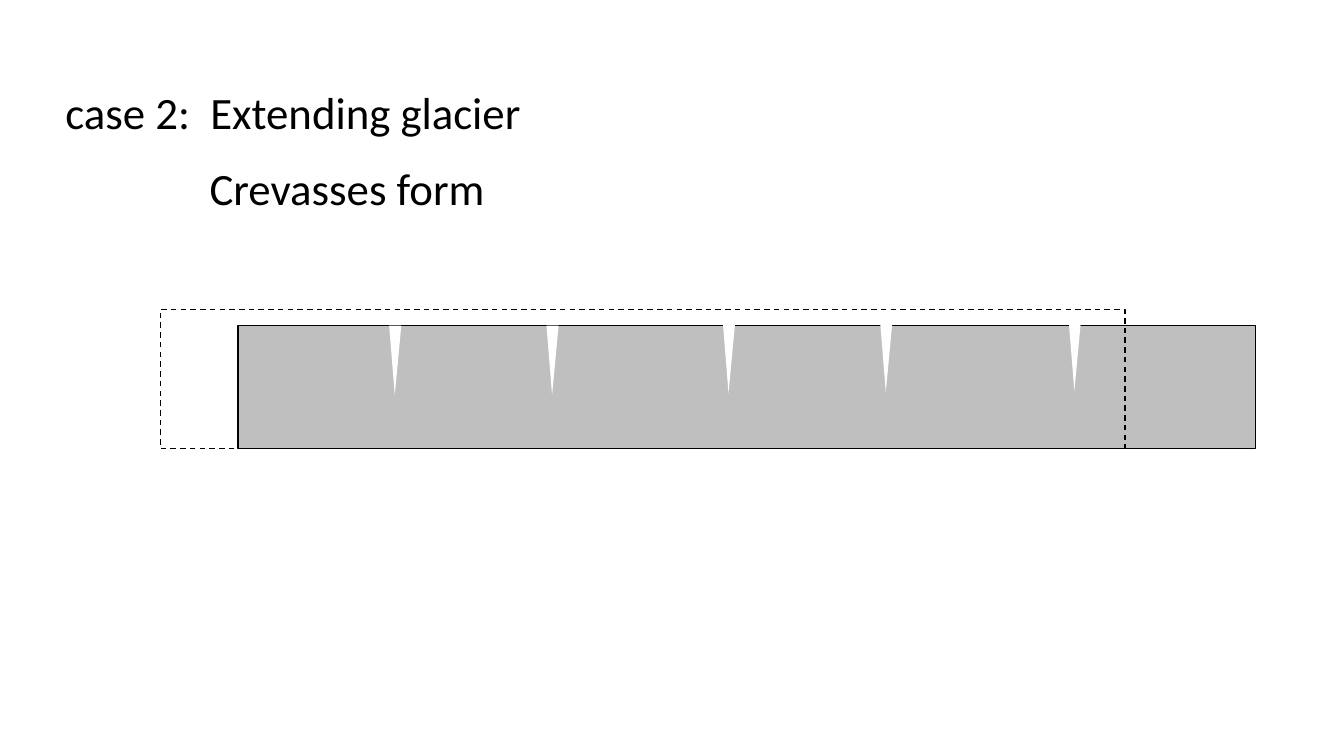
import pptx
import pptx.util
import pptx.dml.color
import pptx.enum.dml
import pptx.enum.shapes
import pptx.enum.text

Inches = pptx.util.Inches
SHAPES = pptx.enum.shapes.MSO_SHAPE

TEXT_FORMAT = {"name": "Calibri", "size": pptx.util.Pt(32)}
OUTLINE = {"width": pptx.util.Pt(1)}
DASHED_OUTLINE = {**OUTLINE, "dash_style": pptx.enum.dml.MSO_LINE.DASH}

# Left and top of each crevasse
CREVASSES = [(3.86, 3.23), (5.42, 3.23), (7.17, 3.21), (8.73, 3.2), (10.6, 3.19)]


def color(hex_string):
    return pptx.dml.color.RGBColor.from_string(hex_string)


def apply_format(target, values):
    for name, value in values.items():
        setattr(target, name, value)


def add_label(page, left, top, width, text):
    box = page.shapes.add_textbox(
        Inches(left), Inches(top), Inches(width), Inches(0.64))
    frame = box.text_frame
    frame.word_wrap = False
    frame.auto_size = pptx.enum.text.MSO_AUTO_SIZE.SHAPE_TO_FIT_TEXT
    span = frame.paragraphs[0].add_run()
    span.text = text
    apply_format(span.font, TEXT_FORMAT)
    span.font.color.rgb = color("000000")


def add_block(page, kind, left, top, width, height, fill=None, outline=None):
    block = page.shapes.add_shape(
        kind, Inches(left), Inches(top), Inches(width), Inches(height))
    block.shadow.inherit = False
    if fill:
        block.fill.solid()
        block.fill.fore_color.rgb = color(fill)
    else:
        block.fill.background()
    if outline:
        block.line.color.rgb = color("000000")
        apply_format(block.line, outline)
    else:
        block.line.fill.background()
    return block


def add_crevasse(page, left, top):
    crevasse = add_block(page, SHAPES.ISOSCELES_TRIANGLE,
                         left, top, 0.12, 0.69, fill="FFFFFF")
    crevasse.rotation = 180
    crevasse.adjustments[0] = 0.54


def main():
    deck = pptx.Presentation()
    deck.slide_width, deck.slide_height = Inches(13.33), Inches(7.5)
    page = deck.slides.add_slide(deck.slide_layouts[6])

    # Heading
    add_label(page, 0.55, 0.79, 4.77, "case 2:  Extending glacier")

    # Glacier after extension, and its earlier extent
    add_block(page, SHAPES.RECTANGLE, 2.36, 3.23, 10.09, 1.22,
              fill="BFBFBF", outline=OUTLINE)
    add_block(page, SHAPES.RECTANGLE, 1.59, 3.07, 9.57, 1.38,
              outline=DASHED_OUTLINE)

    # Crevasses
    for left, top in CREVASSES:
        add_crevasse(page, left, top)

    # Result
    add_label(page, 1.98, 1.55, 2.95, "Crevasses form")

    deck.save("out.pptx")


if __name__ == "__main__":
    main()
